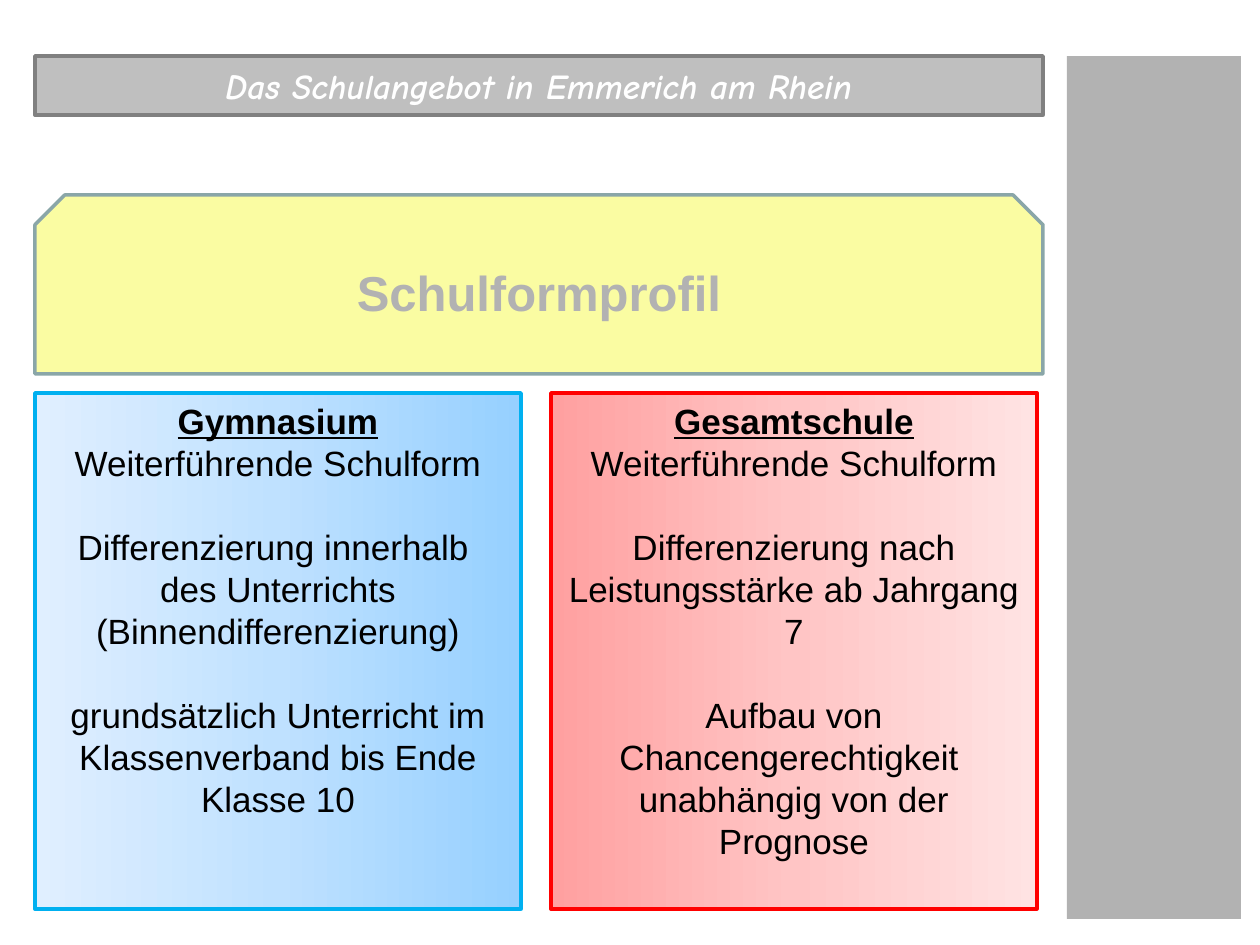
from copy import deepcopy

from pptx import Presentation
from pptx.dml.color import RGBColor
from pptx.enum.shapes import MSO_SHAPE
from pptx.enum.text import MSO_ANCHOR, MSO_AUTO_SIZE, PP_ALIGN
from pptx.oxml.ns import qn
from pptx.util import Pt

PX = 914400 // 126
RECT, SNIPPED = MSO_SHAPE.RECTANGLE, MSO_SHAPE.SNIP_2_SAME_RECTANGLE
TOP, MIDDLE = MSO_ANCHOR.TOP, MSO_ANCHOR.MIDDLE
CENTER, NO_FIT = PP_ALIGN.CENTER, MSO_AUTO_SIZE.NONE


def color(hex_string):
    return RGBColor.from_string(hex_string)


class SlideBuilder:
    font = "Arial"
    line_width = Pt(2)
    block_gap = Pt(24)

    def __init__(self, slide):
        self.slide = slide

    def place(self, shape, left, top, width, height):
        shape.left, shape.top = left * PX, top * PX
        shape.width, shape.height = width * PX, height * PX

    def paint(self, shape, fill, line=None):
        shape.fill.solid()
        shape.fill.fore_color.rgb = color(fill)
        self.outline(shape, line)

    def outline(self, shape, line):
        if line is None:
            shape.line.fill.background()
        else:
            shape.line.color.rgb = color(line)
            shape.line.width = self.line_width

    def gradient(self, shape, colors, angle):
        shape.fill.gradient()
        shape.fill.gradient_angle = angle
        stop_list = next(shape._element.spPr.iter(qn("a:gsLst")))
        stop_list.insert(1, deepcopy(stop_list[0]))
        for i, (stop, value) in enumerate(zip(shape.fill.gradient_stops, colors)):
            stop.color.rgb = color(value)
            stop.position = i / (len(colors) - 1)

    def style(self, paragraph, size, text_color, font=None, bold=False,
              italic=False, underline=False):
        paragraph.alignment = CENTER
        paragraph.line_spacing = 1.0
        for run in paragraph.runs:
            run.font.name = font or self.font
            run.font.size = Pt(size)
            run.font.color.rgb = color(text_color)
            run.font.bold, run.font.italic = bold, italic
            run.font.underline = underline

    def frame(self, shape, anchor):
        text_frame = shape.text_frame
        text_frame.word_wrap = True
        text_frame.auto_size = NO_FIT
        text_frame.vertical_anchor = anchor
        return text_frame

    def title(self, text, box, fill, line, **style):
        header = self.slide.shapes.title
        self.place(header, *box)
        self.paint(header, fill, line)
        text_frame = self.frame(header, MIDDLE)
        text_frame.text = text
        self.style(text_frame.paragraphs[0], **style)

    def shape(self, kind, box, fill, line=None, text=None, **style):
        shape = self.slide.shapes.add_shape(kind, 0, 0, 0, 0)
        shape.shadow.inherit = False
        self.place(shape, *box)
        self.paint(shape, fill, line)
        if text:
            text_frame = self.frame(shape, MIDDLE)
            text_frame.text = text
            self.style(text_frame.paragraphs[0], **style)

    def panel(self, index, box, colors, angle, line, blocks):
        """Body placeholder whose first line is the heading; blocks are spaced apart."""
        panel = self.slide.placeholders[index]
        self.place(panel, *box)
        self.gradient(panel, colors, angle)
        self.outline(panel, line)
        text_frame = self.frame(panel, TOP)
        text_frame.text = "\n".join(text for block in blocks for text in block)
        block_starts = [i == 0 and n > 0 for n, block in enumerate(blocks)
                        for i in range(len(block))]
        for n, (paragraph, starts) in enumerate(zip(text_frame.paragraphs, block_starts)):
            self.style(paragraph, 20, "000000", bold=n == 0, underline=n == 0)
            paragraph.space_before = self.block_gap if starts else Pt(0)
            # No bullet and no hanging indent
            properties = paragraph._p.get_or_add_pPr()
            properties.set("marL", "0")
            properties.set("indent", "0")
            properties.append(properties.makeelement(qn("a:buNone"), {}))


def main():
    presentation = Presentation()
    presentation.slide_width, presentation.slide_height = 1260 * PX, 945 * PX
    two_content = presentation.slide_layouts[3]
    builder = SlideBuilder(presentation.slides.add_slide(two_content))
    left, width = 35, 1008

    # Sidebar and header
    builder.shape(RECT, (1067, 56, 174, 863), "B2B2B2")
    builder.title("Das Schulangebot in Emmerich am Rhein", (left, 56, width, 59),
                  "BFBFBF", "808080", size=20, text_color="FFFFFF",
                  font="Comic Neue", bold=True, italic=True)

    # Topic banner
    builder.shape(SNIPPED, (left, 195, width, 179), "FAFCA2", "8AA6A8",
                  "Schulformprofil", size=28, text_color="B2B2B2", bold=True)

    # School types side by side
    schools = [
        (["96D0FF", "BFE1FF", "E0EFFF"], 180, "00B0F0", [
            ["Gymnasium", "Weiterführende Schulform"],
            ["Differenzierung innerhalb ",
             "des Unterrichts (Binnendifferenzierung)"],
            ["grundsätzlich Unterricht im Klassenverband bis Ende Klasse 10"]]),
        (["FFA0A0", "FFC5C5", "FFE3E3"], 0, "FF0000", [
            ["Gesamtschule", "Weiterführende Schulform"],
            ["Differenzierung nach Leistungsstärke ab Jahrgang 7"],
            ["Aufbau von Chancengerechtigkeit ",
             "unabhängig von der Prognose"]]),
    ]
    for n, school in enumerate(schools):
        builder.panel(n + 1, (left + n * 516, 393, 486, 516), *school)

    presentation.save("out.pptx")


if __name__ == "__main__":
    main()
